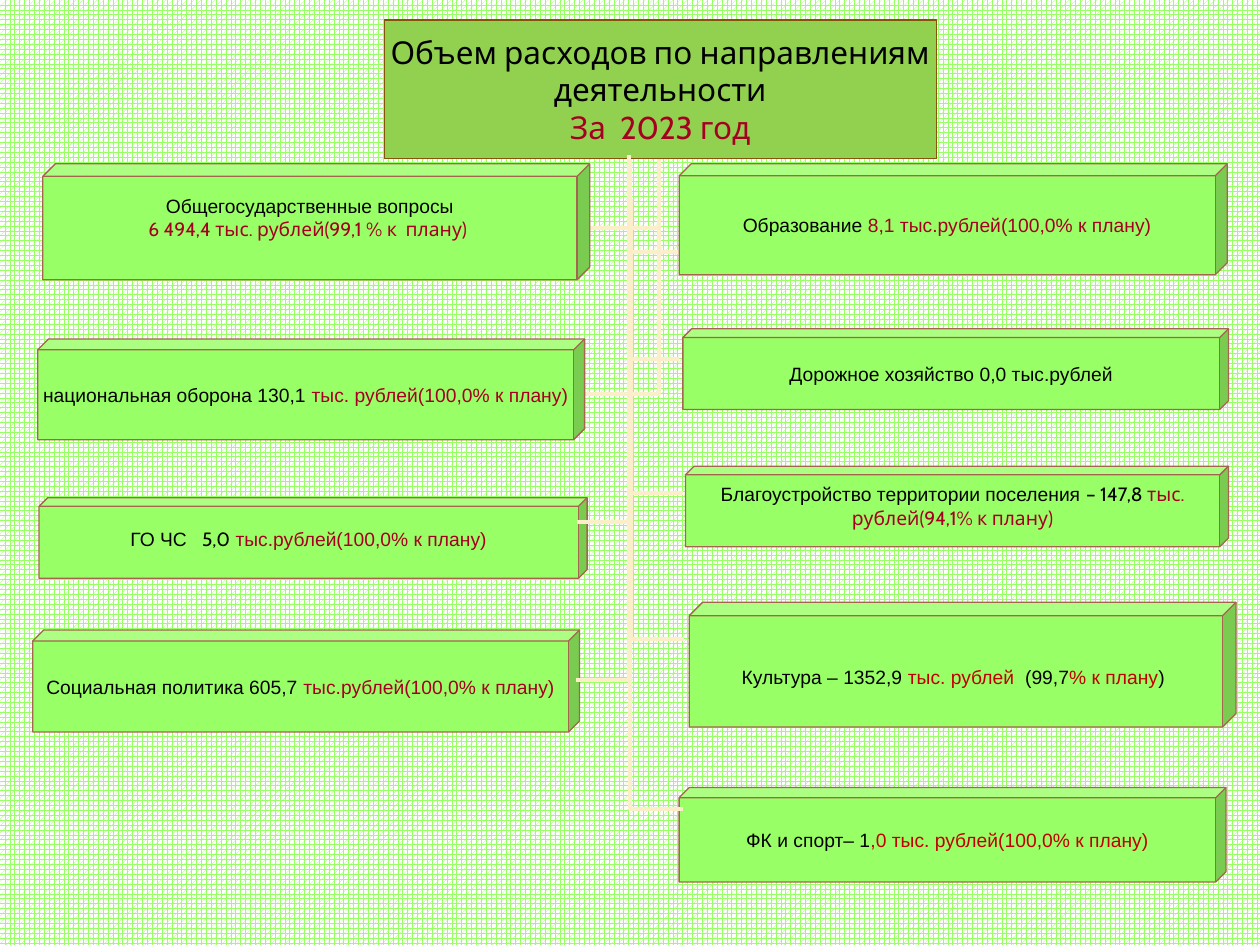
from dataclasses import dataclass

from lxml.etree import SubElement
from pptx import Presentation
from pptx.dml.color import RGBColor as RGB
from pptx.enum.dml import MSO_PATTERN as PATTERN
from pptx.enum.shapes import MSO_CONNECTOR as CONNECTOR, MSO_SHAPE as SHAPE
from pptx.enum.text import MSO_ANCHOR as ANCHOR, PP_ALIGN as ALIGN
from pptx.oxml.ns import qn
from pptx.util import Inches, Pt


@dataclass(frozen=True)
class Theme:
    green: RGB = RGB.from_string("99FF66")
    title_fill: RGB = RGB.from_string("92D050")
    title_line: RGB = RGB.from_string("85540A")
    box_line: RGB = RGB.from_string("A5644E")
    branch: RGB = RGB.from_string("FBEEC9")
    white: RGB = RGB.from_string("FFFFFF")
    black: RGB = RGB.from_string("000000")
    amount: RGB = RGB.from_string("A50021")
    red: RGB = RGB.from_string("C00000")
    body: str = "Arial"
    accent: str = "Cabin"
    title_size: Pt = Pt(18)
    body_size: Pt = Pt(11)
    outline: Pt = Pt(0.75)
    branch_width: Pt = Pt(2.25)


T = Theme()
BEVEL = 0.108

# Run styles: font and colour
LABEL = (T.body, T.black)
AMOUNT = (T.body, T.amount)
RED = (T.body, T.red)
ACCENT = (T.accent, T.black)
ACCENT_AMOUNT = (T.accent, T.amount)

TITLE = [
    [("Объем расходов по направлениям деятельности", ACCENT)],
    [("За  2023 год", ACCENT_AMOUNT)],
]

# Each box: position and size, paragraphs of runs, text frame settings
BOXES = [
    ((5.44, 3.7, 4.31, 0.64),
     [[("Благоустройство территории поселения ", LABEL), ("– 147,8 ", ACCENT),
       ("тыс. рублей(94,1% к плану)", ACCENT_AMOUNT)]],
     {"word_wrap": True, "margin_bottom": Inches(0.08)}),
    ((0.34, 1.3, 4.34, 0.92),
     [[("Общегосударственные вопросы", LABEL)],
      [("6 494,4 тыс. рублей(99,1 % к  плану) ", ACCENT_AMOUNT)]],
     {"margin_bottom": Inches(0.17)}),
    ((5.39, 1.3, 4.35, 0.88),
     [[("Образование ", LABEL), ("8,1 тыс.рублей(100,0% к плану)", AMOUNT)]], {}),
    ((0.3, 2.69, 4.34, 0.8),
     [[("национальная оборона 130,1 ", LABEL),
       ("тыс. рублей(100,0% к плану)", AMOUNT)]], {}),
    ((5.42, 2.61, 4.33, 0.64),
     [[("Дорожное хозяйство 0,0 тыс.рублей", LABEL)]], {}),
    ((5.47, 4.78, 4.34, 0.99),
     [[("Культура – 1352,9", LABEL), (" тыс. рублей  ", RED), ("(99,7", LABEL),
       ("% к плану", RED), (") ", LABEL)]],
     {"margin_top": Inches(0.08)}),
    ((0.26, 5, 4.34, 0.81),
     [[("Социальная политика 605,7", LABEL),
       (" тыс.рублей(100,0% к плану)", AMOUNT)]], {}),
    ((5.39, 6.25, 4.34, 0.75),
     [[("ФК и спорт– 1", LABEL), (",0 тыс. рублей(100,0% к плану)", RED)]], {}),
    ((0.31, 3.95, 4.35, 0.64),
     [[("ГО ЧС  ", LABEL), (" 5,0", ACCENT),
       (" тыс.рублей(100,0% к плану)", AMOUNT)]],
     {"word_wrap": True, "margin_bottom": Inches(0.06)}),
]

# Branches: box end x, box end y, trunk x, trunk top
BACK_BRANCHES = [
    (5.39, 2.85, 5, 1.23),
    (4.55, 3.13, 5.23, 1.25),
    (5.42, 2, 5, 0.79),
    (4.58, 1.81, 5.23, 1.25),
    (5.42, 3.91, 5, 0.42),
]
FRONT_BRANCHES = [
    (4.57, 5.4, 4.99, 2.49),
    (4.58, 4.14, 4.99, 1.23),
    (5.42, 6.42, 5, 2.93),
    (5.43, 5.07, 5.01, 1.58),
]


def set_format(target, values):
    for name, value in values.items():
        setattr(target, name, value)


def add_text(sp, paragraphs, size, settings):
    tf = sp.text_frame
    margins = {f"margin_{side}": 0 for side in ("left", "top", "right", "bottom")}
    set_format(tf, {"vertical_anchor": ANCHOR.MIDDLE, "word_wrap": False,
                    **margins, **settings})
    for i, runs in enumerate(paragraphs):
        p = tf.add_paragraph() if i else tf.paragraphs[0]
        p.alignment = ALIGN.CENTER
        for text, (font, color) in runs:
            r = p.add_run()
            r.text = text
            set_format(r.font, {"name": font, "size": size})
            r.font.color.rgb = color


def add_cube(slide, box, bevel, fill, line):
    sp = slide.shapes.add_shape(SHAPE.CUBE, *map(Inches, box))
    sp.adjustments[0] = bevel
    sp.shadow.inherit = False
    sp.fill.solid()
    sp.fill.fore_color.rgb = fill
    sp.line.color.rgb = line
    sp.line.width = T.outline
    return sp


def add_branch(slide, box_x, box_y, trunk_x, trunk_top):
    on_right = box_x > trunk_x
    # Right-hand branches are a half-turned elbow, left-hand ones are flipped
    ends = ((trunk_x, trunk_top, box_x, box_y) if on_right
            else (box_x, box_y, trunk_x, trunk_top))
    line = slide.shapes.add_connector(CONNECTOR.ELBOW, *map(Inches, ends))
    line.line.color.rgb = T.branch
    line.line.width = T.branch_width
    props = line._element.spPr
    props.find(qn("a:prstGeom")).set("prst", "bentConnector2")
    if on_right:
        props.find(qn("a:xfrm")).set("rot", "10800000")
    SubElement(props, qn("a:effectLst"))


def main():
    prs = Presentation()
    set_format(prs, {"slide_width": Inches(10), "slide_height": Inches(7.5)})
    s = prs.slides.add_slide(prs.slide_layouts[6])

    # Patterned background
    fill = s.background.fill
    fill.patterned()
    fill.pattern = PATTERN.SPHERE
    fill.fore_color.rgb = T.green
    fill.back_color.rgb = T.white

    # Branches behind the boxes
    for branch in BACK_BRANCHES:
        add_branch(s, *branch)

    # Title
    sp = add_cube(s, (3.05, 0.16, 4.38, 1.1), 0, T.title_fill, T.title_line)
    add_text(sp, TITLE, T.title_size, {"word_wrap": True})

    # Spending boxes
    for box, paragraphs, settings in BOXES:
        sp = add_cube(s, box, BEVEL, T.green, T.box_line)
        add_text(sp, paragraphs, T.body_size, settings)

    # Branches in front of the boxes
    for branch in FRONT_BRANCHES:
        add_branch(s, *branch)

    prs.save("out.pptx")


if __name__ == "__main__":
    main()
